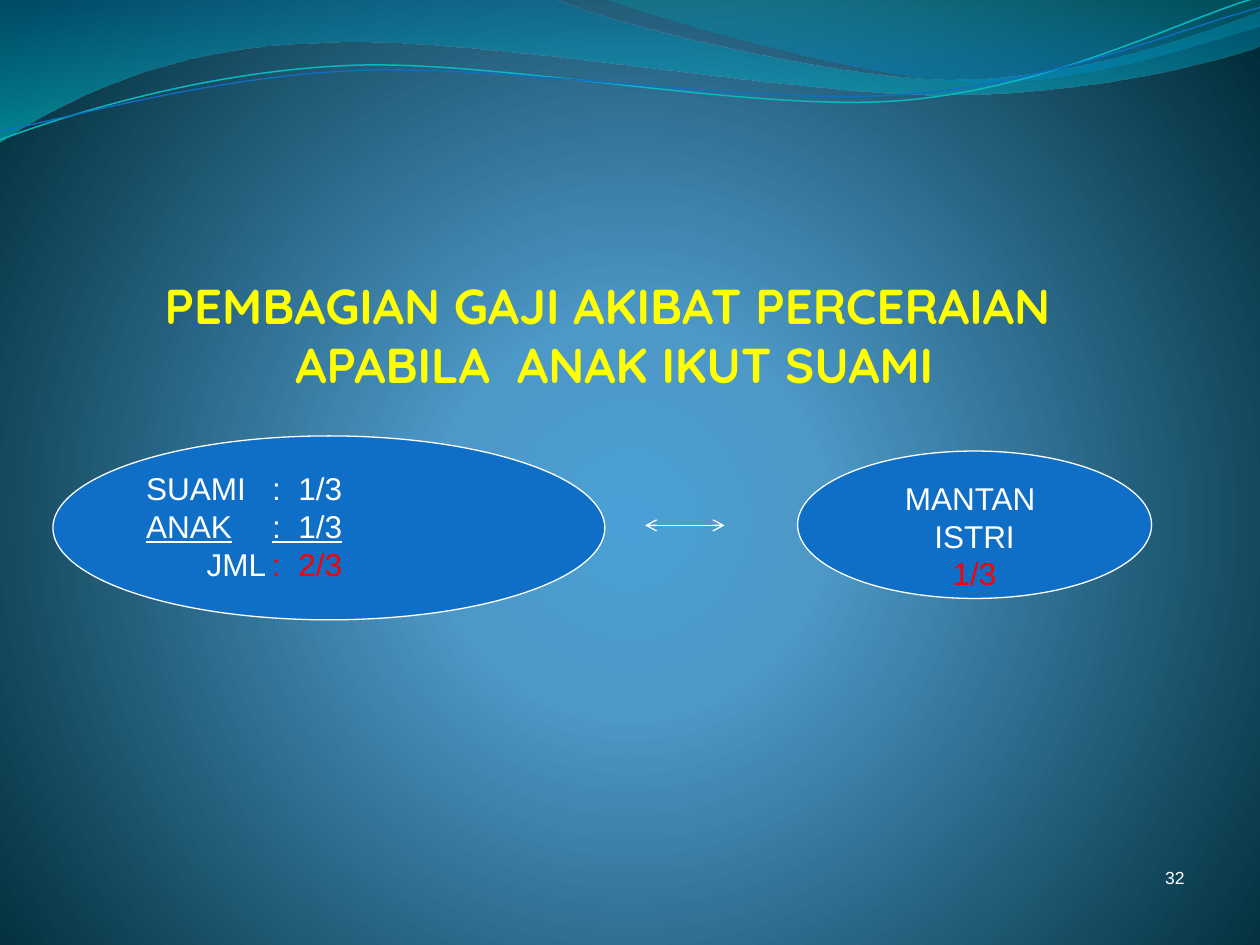
from dataclasses import dataclass

from lxml.etree import SubElement
from pptx import Presentation
from pptx.dml.color import RGBColor
from pptx.enum.shapes import MSO_CONNECTOR, MSO_SHAPE
from pptx.enum.text import MSO_ANCHOR, PP_ALIGN
from pptx.oxml import parse_xml
from pptx.oxml.ns import nsdecls, qn
from pptx.util import Inches, Pt


@dataclass(frozen=True)
class Theme:
    blue: str = "0F6FC6"
    teal: str = "0AB8BF"
    white: str = "FFFFFF"
    yellow: str = "FFFF00"
    red: str = "FF0000"
    title_font: str = "Quicksand"
    body_font: str = "Arial"
    title_size: int = 28
    body_size: int = 18
    number_size: int = 10
    thin: float = 0.75
    backdrop: tuple = ((0, "4AA0D6", 100), (25, "4C98C7", 100), (100, "002C38", 100))
    wide_wave: tuple = ((0, "0074A1", 45), (100, "00C6CF", 55))
    corner_wave: tuple = ((0, "00A1A9", 30), (80, "008BBF", 45))


THEME = Theme()

# Each wave is a start point, then line ends (2 numbers) or cubic curves (6 numbers).
WIDE_WAVE = [(0, 0), (4.4, -0.01), (4.76, 0.17, 6.64, 0.63, 7.58, 0.63),
             (8.53, 0.63, 9.58, 0.26, 10, 0.09), (10.01, 0.36),
             (9.83, 0.44, 8.7, 0.76, 7.46, 0.75), (6.22, 0.75, 3.82, 0.28, 2.57, 0.34),
             (1.29, 0.36, 0.46, 0.83, -0.01, 1.13)]
CORNER_WAVE = [(4.79, -0.01), (5.09, 0.11, 6.82, 0.62, 7.69, 0.65),
               (8.56, 0.69, 9.61, 0.32, 10, 0.21), (10, 0)]
TEAL_WAVE = [(0, 1.11), (0.48, 0.93, 1.58, 0.57, 2.77, 0.52),
             (3.95, 0.47, 5.93, 0.89, 7.13, 0.8), (8.33, 0.71, 9.38, 0.15, 9.98, -0.02)]
BLUE_WAVE = [(0, 1.04), (0.47, 0.96, 1.64, 0.61, 2.83, 0.56),
             (4.03, 0.51, 5.97, 0.84, 7.17, 0.75), (8.36, 0.67, 9.41, 0.21, 10, 0.06)]


def gradient(stops, direction):
    marks = "".join(
        f'<a:gs pos="{place * 1000}"><a:srgbClr val="{color}">'
        f'<a:alpha val="{opacity * 1000}"/></a:srgbClr></a:gs>'
        for place, color, opacity in stops)
    return (f'<a:gradFill {nsdecls("a")} rotWithShape="1">'
            f'<a:gsLst>{marks}</a:gsLst>{direction}</a:gradFill>')


def paint_background(page):
    direction = ('<a:path path="circle"><a:fillToRect l="10000" t="110000" '
                 'r="10000" b="100000"/></a:path>')
    page.background.fill.solid()
    properties = page.background._cSld.bg.bgPr
    solid = properties.find(qn("a:solidFill"))
    properties.replace(solid, parse_xml(gradient(THEME.backdrop, direction)))


def bend(wave, steps):
    """Turn the straight segments of the wave into its cubic curves."""
    segments = list(wave._element.iter(qn("a:lnTo")))
    for segment, step in zip(segments, steps[1:]):
        if len(step) == 2:
            continue
        curve = parse_xml(f'<a:cubicBezTo {nsdecls("a")}/>')
        for x, y in zip(step[::2], step[1::2]):
            SubElement(curve, qn("a:pt"), x=str(Inches(x) - wave.left),
                       y=str(Inches(y) - wave.top))
        segment.getparent().replace(segment, curve)


def add_wave(page, steps, stops=None, line=None, width=THEME.thin):
    """Draw a filled wave from gradient stops, or an open one from a line colour."""
    points = [(Inches(step[-2]), Inches(step[-1])) for step in steps]
    builder = page.shapes.build_freeform(*points[0])
    builder.add_line_segments(points[1:], close=stops is not None)
    wave = builder.convert_to_shape()
    bend(wave, steps)
    wave.shadow.inherit = False
    wave.fill.background()
    if stops:
        properties = wave._element.spPr
        fill = parse_xml(gradient(stops, '<a:lin ang="5400000" scaled="1"/>'))
        properties.replace(properties.find(qn("a:noFill")), fill)
        wave.line.fill.background()
    else:
        set_line(wave, line, width)


def set_line(shape, color, width=THEME.thin):
    shape.line.color.rgb = RGBColor.from_string(color)
    shape.line.width = Pt(width)


def add_span(para, text, size, color=THEME.white, font=THEME.body_font,
             bold=False, underline=False):
    span = para.add_run()
    span.text = text
    span.font.name = font
    span.font.size = Pt(size)
    span.font.bold = bold
    span.font.underline = underline
    span.font.color.rgb = RGBColor.from_string(color)


def set_tabs(para, stops):
    tabs = SubElement(para._p.get_or_add_pPr(), qn("a:tabLst"))
    for stop in stops:
        SubElement(tabs, qn("a:tab"), pos=str(Inches(stop)), algn="l")


def add_text_box(page, left, top, width, height, align, anchor=MSO_ANCHOR.TOP):
    box = page.shapes.add_textbox(Inches(left), Inches(top), Inches(width), Inches(height))
    box.text_frame.word_wrap = True
    box.text_frame.vertical_anchor = anchor
    para = box.text_frame.paragraphs[0]
    para.alignment = align
    return para


def add_title(page, lines):
    para = add_text_box(page, 0.58, 1.17, 8.59, 2, PP_ALIGN.CENTER, MSO_ANCHOR.BOTTOM)
    for index, line in enumerate(lines):
        if index:
            para.add_line_break()
        add_span(para, line, THEME.title_size, THEME.yellow, THEME.title_font, bold=True)


def add_share(page, left, top, width, height, align, rows):
    """Add an ellipse; a row is its tab stops and its (text, colour, underline) spans."""
    ellipse = page.shapes.add_shape(MSO_SHAPE.OVAL, Inches(left), Inches(top),
                                    Inches(width), Inches(height))
    ellipse.shadow.inherit = False
    ellipse.fill.solid()
    ellipse.fill.fore_color.rgb = RGBColor.from_string(THEME.blue)
    set_line(ellipse, THEME.white)
    frame = ellipse.text_frame
    frame.word_wrap = True
    frame.vertical_anchor = MSO_ANCHOR.TOP
    for index, (stops, spans) in enumerate(rows):
        para = frame.add_paragraph() if index else frame.paragraphs[0]
        para.alignment = align
        if stops:
            set_tabs(para, stops)
        for text, color, underline in spans:
            add_span(para, text, THEME.body_size, color, underline=underline)


def add_double_arrow(page, left, right, y):
    arrow = page.shapes.add_connector(MSO_CONNECTOR.STRAIGHT, Inches(left), Inches(y),
                                      Inches(right), Inches(y))
    set_line(arrow, THEME.white)
    for end in ("a:headEnd", "a:tailEnd"):
        SubElement(arrow.line._get_or_add_ln(), qn(end), type="arrow")
    SubElement(arrow._element.spPr, qn("a:effectLst"))


def main():
    deck = Presentation()
    deck.slide_width, deck.slide_height = Inches(10), Inches(7.5)
    page = deck.slides.add_slide(deck.slide_layouts[6])
    paint_background(page)
    add_wave(page, WIDE_WAVE, stops=THEME.wide_wave)
    add_wave(page, CORNER_WAVE, stops=THEME.corner_wave)
    add_wave(page, TEAL_WAVE, line=THEME.teal, width=0.85)
    add_wave(page, BLUE_WAVE, line=THEME.blue)

    add_title(page, ["PEMBAGIAN GAJI AKIBAT PERCERAIAN ", "APABILA  ANAK IKUT SUAMI"])
    number = add_text_box(page, 7.17, 6.83, 2.33, 0.5, PP_ALIGN.RIGHT)
    add_span(number, "32", THEME.number_size)

    white, red = THEME.white, THEME.red
    add_share(page, 0.42, 3.46, 4.38, 1.46, PP_ALIGN.JUSTIFY, [
        ([1], [("SUAMI\t:  1/3", white, False)]),
        ([1], [("ANAK\t:  1/3", white, True)]),
        ([0.48, 1], [("\tJML\t", white, False), (":  2/3", red, False)]),
    ])
    add_share(page, 6.33, 3.58, 2.81, 1.17, PP_ALIGN.CENTER, [
        ([], [("MANTAN ", white, False)]),
        ([], [("ISTRI", white, False)]),
        ([], [("1/3", red, False)]),
    ])
    add_double_arrow(page, 5.12, 5.75, 4.17)
    deck.save("out.pptx")


if __name__ == "__main__":
    main()
